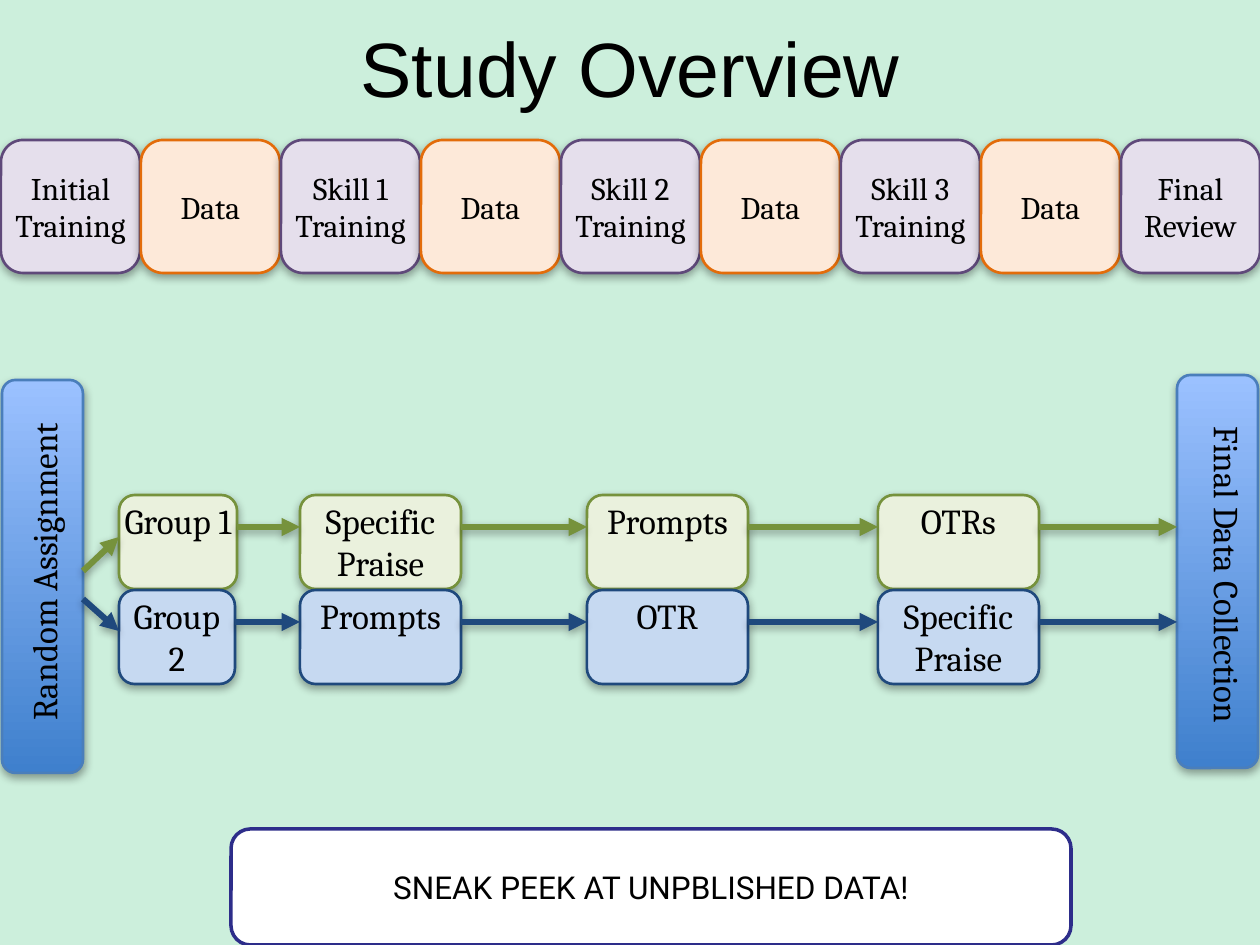
"""Build the Study Overview slide."""
from lxml import etree
from pptx import Presentation
from pptx.dml.color import RGBColor
from pptx.enum.shapes import MSO_CONNECTOR, MSO_SHAPE
from pptx.enum.text import MSO_ANCHOR, PP_ALIGN
from pptx.oxml.ns import qn
from pptx.util import Emu, Pt

ROUNDED = MSO_SHAPE.ROUNDED_RECTANGLE
STRAIGHT = MSO_CONNECTOR.STRAIGHT
TOP, MIDDLE = MSO_ANCHOR.TOP, MSO_ANCHOR.MIDDLE
CENTER = PP_ALIGN.CENTER
EMU_PER_PX = 914400 / 126
SERIF = "Cambria"
COLORS = {
    "background": "CCEFDC",
    "black": "000000",
    "training": "E5DFEC",
    "training_line": "5F497A",
    "data": "FDE9D9",
    "data_line": "E36C0A",
    "green": "EAF1DD",
    "green_line": "76923C",
    "blue": "C6D9F1",
    "blue_line": "1F497D",
    "panel_top": "9BC1FF",
    "panel_bottom": "3F80CD",
    "panel_line": "4A7EBB",
    "banner": "FFFFFF",
    "banner_line": "2D2D8A",
}


def px(*lengths):
    return [Emu(round(length * EMU_PER_PX)) for length in lengths]


def rgb(name):
    return RGBColor.from_string(COLORS[name])


class StudySlide:
    """Hold the style and the current slide."""

    def __init__(self, deck):
        self.slide = deck.slides.add_slide(deck.slide_layouts[5])
        background = self.slide.background.fill
        background.solid()
        background.fore_color.rgb = rgb("background")

    def label(self, frame, text, size, font=SERIF, anchor=MIDDLE, inset=0):
        frame.text = text
        frame.word_wrap = True
        frame.vertical_anchor = anchor
        frame.margin_left = frame.margin_right = inset
        frame.margin_top = frame.margin_bottom = inset
        paragraph = frame.paragraphs[0]
        paragraph.alignment = CENTER
        for run in paragraph.runs:
            run.font.size = Pt(size)
            run.font.name = font
            run.font.color.rgb = rgb("black")

    def shade(self, effects):
        shadow = etree.SubElement(
            effects, qn("a:outerShdw"), blurRad="63500", dist="26670",
            dir="5400000", rotWithShape="0")
        tint = etree.SubElement(shadow, qn("a:srgbClr"), val=COLORS["black"])
        etree.SubElement(tint, qn("a:alpha"), val="35000")

    def title(self, text, box):
        heading = self.slide.shapes.title
        heading.left, heading.top, heading.width, heading.height = px(*box)
        self.label(heading.text_frame, text, 44, "Arial")

    def card(self, box, color, width=1.5, shaded=True):
        card = self.slide.shapes.add_shape(ROUNDED, *px(*box))
        card.shadow.inherit = False
        if shaded:
            self.shade(card._element.spPr.find(qn("a:effectLst")))
        if color == "panel":
            card.fill.gradient()
            card.fill.gradient_angle = 270
            for stop, name in zip(card.fill.gradient_stops, ("panel_top", "panel_bottom")):
                stop.color.rgb = rgb(name)
        else:
            card.fill.solid()
            card.fill.fore_color.rgb = rgb(color)
        card.line.color.rgb = rgb(color + "_line")
        card.line.width = Pt(width)
        return card.text_frame

    def vertical_label(self, text, box, direction, anchor):
        frame = self.slide.shapes.add_textbox(*px(*box)).text_frame
        self.label(frame, text, 20, anchor=anchor)
        frame._txBody.bodyPr.set("vert", direction)

    def arrow(self, start, end, color):
        arrow = self.slide.shapes.add_connector(STRAIGHT, *px(*start, *end))
        arrow.line.color.rgb = rgb(color + "_line")
        arrow.line.width = Pt(3.5)
        properties = arrow._element.spPr
        etree.SubElement(properties.find(qn("a:ln")), qn("a:tailEnd"), type="triangle")
        self.shade(etree.SubElement(properties, qn("a:effectLst")))


def main():
    deck = Presentation()
    deck.slide_width, deck.slide_height = px(1260, 945)
    study = StudySlide(deck)
    study.title("Study Overview", (76, 15, 1109, 103))

    stages = ["Initial Training", "Data", "Skill 1 Training", "Data", "Skill 2 Training",
              "Data", "Skill 3 Training", "Data", "Final Review"]
    for index, stage in enumerate(stages):
        color = "data" if stage == "Data" else "training"
        study.label(study.card((1 + 140 * index, 140, 139, 133), color), stage, 18)

    study.card((1177, 375, 81, 393), "panel")
    study.vertical_label("Final Data Collection", (1177, 375, 72, 399), "vert", TOP)
    study.card((2, 380, 81, 393), "panel")
    study.vertical_label("Random Assignment", (21, 375, 45, 393), "vert270", MIDDLE)

    groups = [
        ("green", 495, 118, ["Group 1", "Specific Praise", "Prompts", "OTRs"]),
        ("blue", 590, 116, ["Group 2", "Prompts", "OTR", "Specific Praise"]),
    ]
    lefts = [119, 300, 587, 878]
    for color, top, group_width, steps in groups:
        widths = [group_width, 161, 161, 161]
        for left, width, step in zip(lefts, widths, steps):
            study.label(study.card((left, top, width, 94), color), step, 20, anchor=TOP)
        level = top + 32
        for left, width, target in zip(lefts, widths, lefts[1:] + [1177]):
            study.arrow((left + width, level), (target, level), color)
    study.arrow((83, 571), (119, 537), "green")
    study.arrow((83, 599), (119, 631), "blue")

    banner = study.card((231, 829, 840, 116), "banner", 2, shaded=False)
    study.label(banner, "SNEAK PEEK AT UNPBLISHED DATA!", 18, "Roboto", inset=Pt(4))
    deck.save("out.pptx")


if __name__ == "__main__":
    main()
